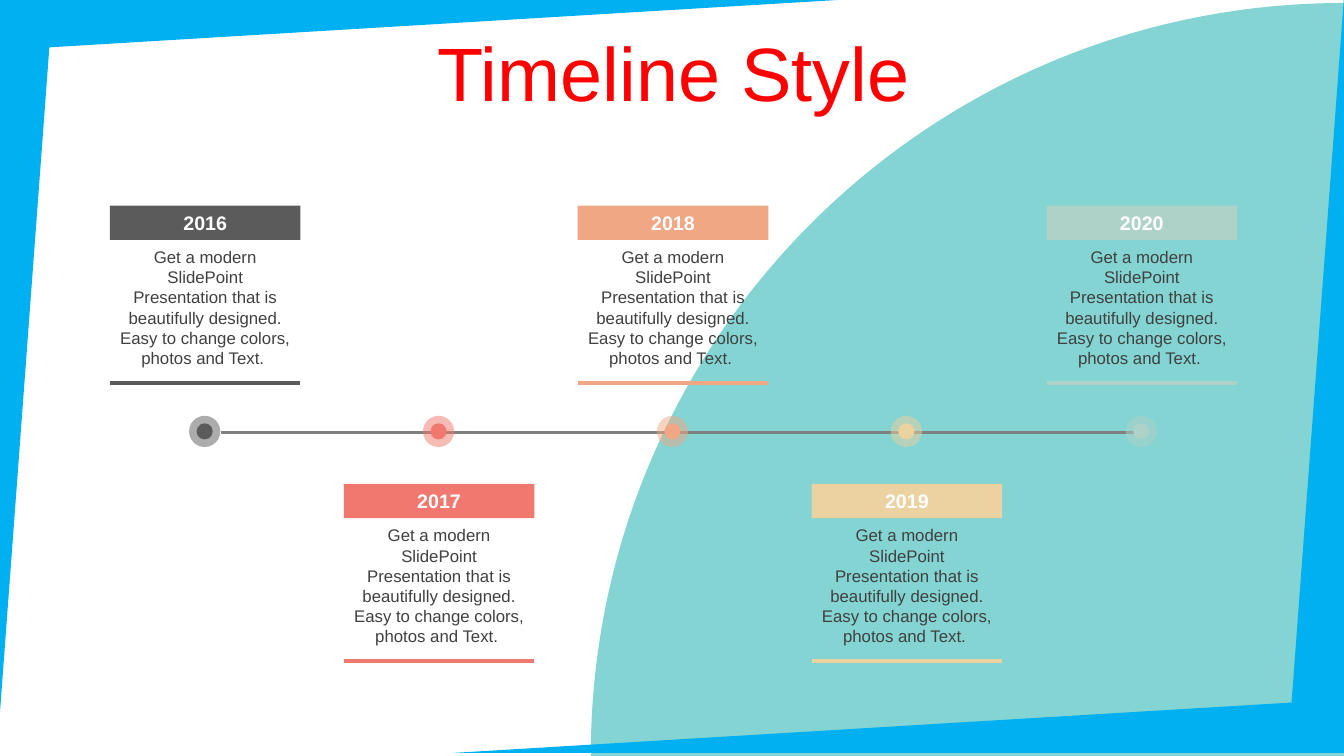
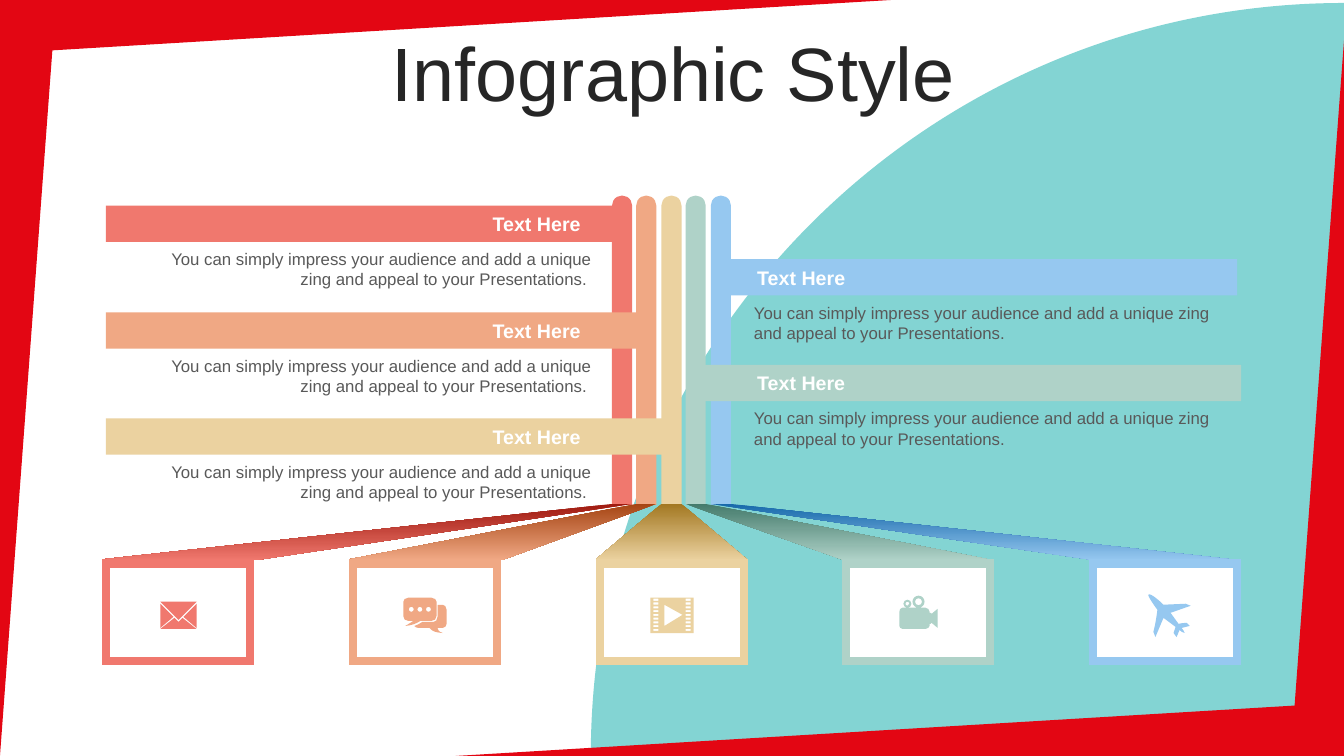
from lxml.etree import SubElement
from pptx import Presentation
from pptx.dml.color import RGBColor
from pptx.enum.shapes import MSO_CONNECTOR, MSO_SHAPE as SHAPE
from pptx.enum.text import MSO_ANCHOR as ANCHOR, MSO_AUTO_SIZE, PP_ALIGN as ALIGN
from pptx.oxml.ns import qn
from pptx.util import Emu, Pt

PX = 9144  # EMU per px, 100 px to the inch
WIDTH, HEIGHT = 1333, 750
FONT = "Arial"
GRAY, CORAL, PEACH, SAND, SAGE, SKY = (
    "5B5B5B", "F0786E", "F0A884", "EBD2A0", "AFD2C8", "96C8F0")
WHITE, TEAL, AXIS = "FFFFFF", "13ADAB", "808080"

TIMELINE_NOTE = ("Get a modern SlidePoint Presentation that is beautifully "
                 "designed. Easy to change colors, photos and Text. ")
# year, colour, top of the card
TIMELINE = [
    ("2016", GRAY, 204),
    ("2017", CORAL, 480),
    ("2018", PEACH, 204),
    ("2019", SAND, 480),
    ("2020", SAGE, 204),
]

BAR_LABEL = "Text Here"
BAR_NOTE = ("You can simply impress your audience and add a unique zing "
            "and appeal to your Presentations. ")
# colour, left, top, width
LEFT_BARS = [(CORAL, 105, 204, 521), (PEACH, 105, 310, 544), (SAND, 105, 415, 563)]
RIGHT_BARS = [(SKY, 707, 257, 520), (SAGE, 681, 362, 550)]


def circle(cx, cy, r):
    k = 0.55 * r
    return [(cx, cy - r),
            (cx + k, cy - r, cx + r, cy - k, cx + r, cy),
            (cx + r, cy + k, cx + k, cy + r, cx, cy + r),
            (cx - k, cy + r, cx - r, cy + k, cx - r, cy),
            (cx - r, cy - k, cx - k, cy - r, cx, cy - r)]


def box(left, top, right, bottom):
    return [(left, top), (right, top), (right, bottom), (left, bottom)]


# An outline is a list of contours; a 2-tuple is a corner, a 6-tuple a cubic curve.
QUARTER = [[(1333, 3), (1333, 750), (586, 750), (586, 337, 920, 3, 1333, 3)]]
ENVELOPE = [
    [(181, 613), (195, 624), (159, 624), (173, 613), (177, 617)],
    [(195, 599), (195, 623), (182, 612)],
    [(159, 599), (172, 612), (159, 623)],
    [(159, 597), (195, 597), (177, 615)],
]
CHAT = [
    [(405, 593), (428, 593), (431, 593, 433, 595, 433, 597), (433, 611),
     (433, 614, 431, 616, 428, 616), (417, 616), (412, 619, 410, 620, 402, 621),
     (407, 618, 407, 618, 410, 616), (405, 616), (402, 616, 400, 614, 400, 611),
     (400, 597), (400, 595, 402, 593, 405, 593)],
    [(434, 600), (439, 600), (441, 600, 443, 602, 443, 605), (443, 619),
     (443, 621, 441, 623, 439, 623), (434, 623), (435, 625, 434, 626, 439, 628),
     (431, 627, 430, 627, 426, 623), (415, 623), (413, 623, 412, 622, 411, 621),
     (414, 620, 416, 619, 419, 617), (430, 617), (432, 617, 434, 615, 434, 612)],
    *[circle(cx, 604.5, 2.5) for cx in (408, 416.5, 425)],
]
FILM = [box(645, 593, 688, 628), [(659, 600), (659, 621), (677, 610)]] + [
    box(left, 594 + 3.75 * row, left + 5, 596 + 3.75 * row)
    for left in (648, 680) for row in range(9)]
CAMERA = [
    [(895, 603), (918, 603), (920, 603, 922, 605, 922, 607), (922, 608), (923, 608),
     (924, 609), (930, 604), (930, 623), (924, 618), (923, 619), (922, 619),
     (922, 621), (922, 622, 920, 624, 918, 624), (895, 624),
     (893, 624, 892, 622, 892, 621), (892, 607), (892, 605, 893, 603, 895, 603)],
    circle(900, 599, 4), circle(900, 599, 2),
    circle(911, 597, 6), circle(911, 597, 3.5),
]
PLANE = [
    [(1180, 621), (1172, 623), (1173, 624, 1175, 627, 1175, 628),
     (1173, 628, 1171, 626, 1170, 625), (1167, 632), (1164, 628), (1166, 622),
     (1154, 613), (1146, 632), (1144, 627), (1146, 619, 1147, 613, 1148, 605),
     (1145, 601, 1138, 591, 1139, 590), (1141, 588, 1150, 596, 1154, 600),
     (1176, 599), (1181, 601), (1161, 608), (1169, 619),
     (1172, 618, 1177, 618, 1177, 618)],
]
# colour, darker start of the ribbon, icon
PANELS = [
    (CORAL, "9F1B10", ENVELOPE),
    (PEACH, "A64514", CHAT),
    (SAND, "A37822", FILM),
    (SAGE, "457B6C", CAMERA),
    (SKY, "186AAB", PLANE),
]


def rgb(color):
    return RGBColor.from_string(color)


def px(*lengths):
    return [Emu(round(n * PX)) for n in lengths]


def paint(sp, fill, alpha=100, line=None, weight=0):
    sp.shadow.inherit = False
    sp.fill.solid()
    sp.fill.fore_color.rgb = rgb(fill)
    if alpha < 100:
        clr = sp.fill._xPr.find(".//" + qn("a:srgbClr"))
        SubElement(clr, qn("a:alpha")).set("val", str(alpha * 1000))
    if line:
        sp.line.color.rgb = rgb(line)
        sp.line.width = Pt(weight)
        ln = sp.element.spPr.find(qn("a:ln"))
        SubElement(ln, qn("a:miter")).set("lim", "800000")
    else:
        sp.line.fill.background()
    return sp


def add_box(slide, kind, left, top, width, height, fill, **look):
    return paint(slide.shapes.add_shape(kind, *px(left, top, width, height)), fill, **look)


def add_outline(slide, contours, fill, **look):
    """Draw contours as straight segments, then join each curve's three into one."""
    builder = slide.shapes.build_freeform(*px(*contours[0][0]), scale=1.0)
    for i, (start, *nodes) in enumerate(contours):
        if i:
            builder.move_to(*px(*start))
        builder.add_line_segments(
            [px(*node[j:j + 2]) for node in nodes for j in range(0, len(node), 2)], close=True)
    sp = builder.convert_to_shape()
    segments = iter(list(sp.element.iter(qn("a:lnTo"))))
    for _, *nodes in contours:
        for node in nodes:
            segment = next(segments)
            if len(node) == 6:
                segment.tag = qn("a:cubicBezTo")
                for extra in (next(segments), next(segments)):
                    segment.append(extra[0])
                    extra.getparent().remove(extra)
    return paint(sp, fill, **look)


def add_line(slide, x1, y1, x2, y2, color, weight):
    line = slide.shapes.add_connector(MSO_CONNECTOR.STRAIGHT, *px(x1, y1, x2, y2))
    line.line.color.rgb = rgb(color)
    line.line.width = Pt(weight)
    SubElement(line.element.spPr, qn("a:effectLst"))


def write(sp, text, size, color, bold=False, align=ALIGN.CENTER, anchor=ANCHOR.TOP,
          sides=(10, 10)):
    tf = sp.text_frame
    tf.word_wrap = True
    tf.auto_size = MSO_AUTO_SIZE.NONE
    tf.vertical_anchor = anchor
    tf.margin_left, tf.margin_right = px(*sides)
    tf.margin_top, tf.margin_bottom = px(5, 5)
    p = tf.paragraphs[0]
    p.alignment = align
    r = p.add_run()
    r.text = text
    r.font.name = FONT
    r.font.size = Pt(size)
    r.font.bold = bold
    r.font.color.rgb = rgb(color)
    return p


def add_note(slide, text, left, top, width, height, color, **look):
    write(slide.shapes.add_textbox(*px(left, top, width, height)), text, 12, color, **look)


def prepare_layout(prs):
    """Keep only the title on the layout and place it."""
    layout = prs.slide_layouts.get_by_name("Title Only")
    for ph in list(layout.placeholders):
        if ph.placeholder_format.idx:
            ph.element.getparent().remove(ph.element)
        else:
            ph.left, ph.top, ph.width, ph.height = px(35, 37, 1266, 79)
    return layout


def add_backdrop(slide, layout):
    """Put the teal quarter circle on the layout, behind everything."""
    quarter = add_outline(slide, QUARTER, TEAL, alpha=52)
    layout.shapes.element.insert(2, quarter.element)


def add_title(slide, text, color):
    p = write(slide.shapes.title, text, 54, color, anchor=ANCHOR.MIDDLE)
    p.line_spacing = 0.9


def add_frame(slide, color, shift=0):
    """Cover two opposite corners; the second is the first turned half round."""
    corner = [(0, 0), (0, 750), (52, 50), (884, 0)]
    for points in (corner, [(1336 - x, 750 - y) for x, y in corner]):
        add_outline(slide, [[(x + shift, y + shift) for x, y in points]], color)


def build_timeline(slide):
    add_title(slide, "Timeline Style", "FF0000")
    add_line(slide, 219, 429, 1125, 429, AXIS, 2)
    width = 189
    for i, (year, color, top) in enumerate(TIMELINE):
        left = int(109 + 232.25 * i)
        center = left + width // 2
        for size, alpha in ((31, 50), (16, 100)):
            add_box(slide, SHAPE.OVAL, center - size / 2, 428 - size / 2, size, size,
                    color, alpha=alpha)
        add_note(slide, TIMELINE_NOTE, left, top + 36, width, 131, "404040")
        band = add_box(slide, SHAPE.RECTANGLE, left, top, width, 34, color)
        write(band, year, 14, WHITE, bold=True, anchor=ANCHOR.MIDDLE)
        add_line(slide, left, top + 176, left + width, top + 176, color, 3)
    add_frame(slide, "00B0F0", -3)


def build_infographic(slide):
    add_title(slide, "Infographic Style", "262626")
    columns = [int(607 + 24.6 * i) for i in range(len(PANELS))]
    panels = [round(105 + 244.8 * i) for i in range(len(PANELS))]
    for column, (color, _, _) in zip(columns, PANELS):
        sp = add_box(slide, SHAPE.ROUND_2_SAME_RECTANGLE, column, 194, 20, 307, color)
        sp.adjustments[0], sp.adjustments[1] = 0.5, 0
    for column, left, (color, dark, _) in zip(columns, panels, PANELS):
        ribbon = add_outline(slide, [[(column, 500), (left - 4, 555), (left + 147, 556),
                                      (column + 20, 500)]], color)
        ribbon.fill.gradient()
        ribbon.fill.gradient_angle = 270
        for stop, shade in zip(ribbon.fill.gradient_stops, (dark, color)):
            stop.color.rgb = rgb(shade)
    for bars, align, note_left, note_width in (
            (RIGHT_BARS, ALIGN.LEFT, 738, 490), (LEFT_BARS, ALIGN.RIGHT, 126, 471)):
        for color, left, top, width in bars:
            bar = add_box(slide, SHAPE.RECTANGLE, left, top, width, 36, color)
            sides = (751 - left, 0) if align == ALIGN.LEFT else (0, left + width - 576)
            write(bar, BAR_LABEL, 14, WHITE, bold=True, align=align,
                  anchor=ANCHOR.MIDDLE, sides=sides)
            add_note(slide, BAR_NOTE, note_left, top + 38, note_width, 50, "595959",
                     align=align)
    for left, (color, _, icon) in zip(panels, PANELS):
        add_box(slide, SHAPE.RECTANGLE, left, 559, 143, 97, WHITE, line=color, weight=6)
        add_outline(slide, icon, color)
    add_frame(slide, "E30613")


def main():
    prs = Presentation()
    prs.slide_width, prs.slide_height = px(WIDTH, HEIGHT)
    layout = prepare_layout(prs)
    slides = [prs.slides.add_slide(layout) for _ in range(2)]
    add_backdrop(slides[0], layout)
    build_timeline(slides[0])
    build_infographic(slides[1])
    prs.save("out.pptx")


if __name__ == "__main__":
    main()
